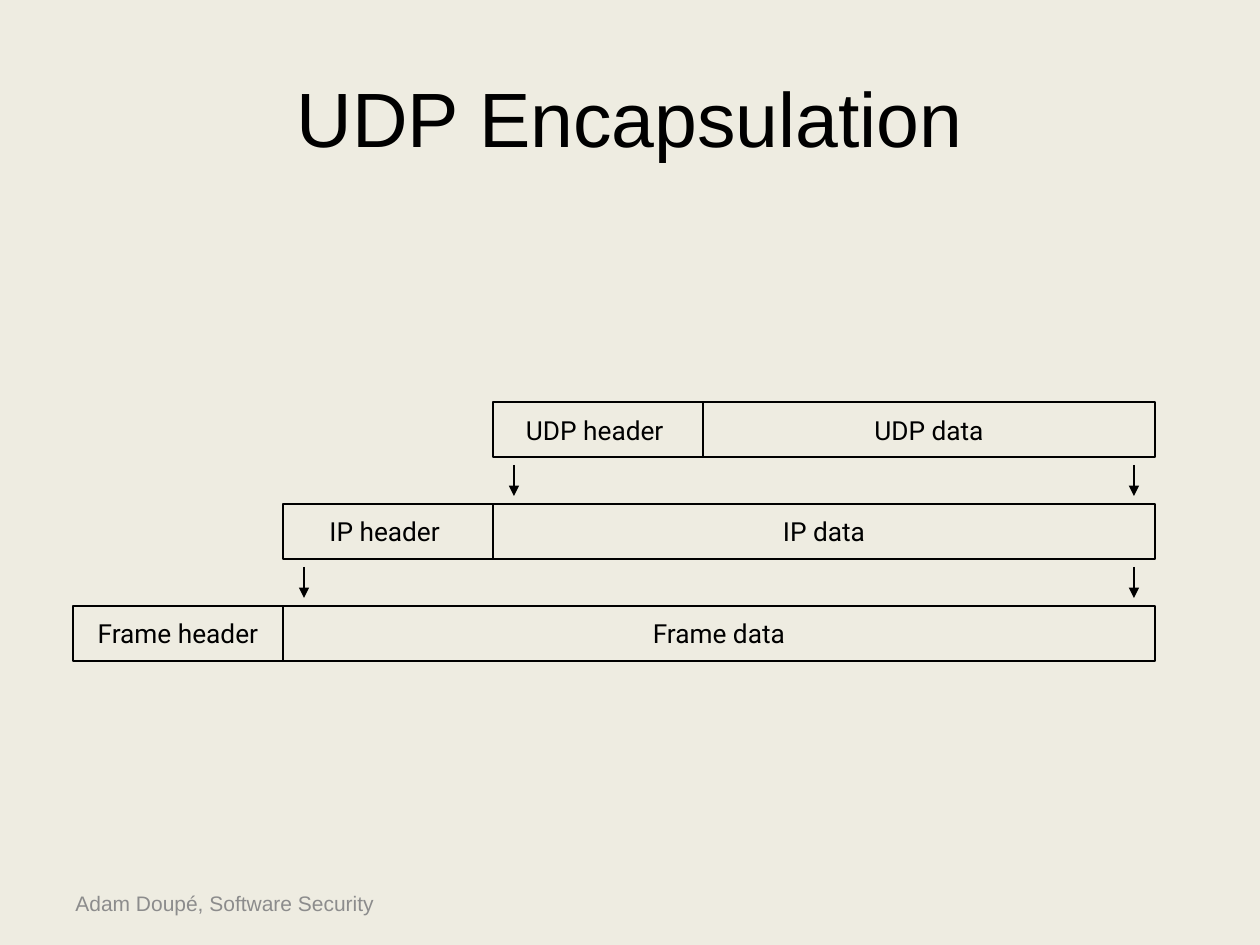
from dataclasses import dataclass

from lxml import etree
from pptx import Presentation
from pptx.dml.color import RGBColor
from pptx.enum.shapes import MSO_CONNECTOR, MSO_SHAPE
from pptx.enum.text import MSO_ANCHOR, PP_ALIGN
from pptx.oxml.ns import qn
from pptx.util import Emu, Pt

RECT = MSO_SHAPE.RECTANGLE
LINE = MSO_CONNECTOR.STRAIGHT
MIDDLE = MSO_ANCHOR.MIDDLE
LEFT, CENTER = PP_ALIGN.LEFT, PP_ALIGN.CENTER

SCALE = 914400 // 126  # EMU in one px


@dataclass(frozen=True)
class Theme:
    back: RGBColor = RGBColor(0xEE, 0xEC, 0xE1)
    ink: RGBColor = RGBColor(0, 0, 0)
    muted: RGBColor = RGBColor(0x8C, 0x8C, 0x8C)
    font: str = "Arial"
    label_font: str = "Roboto"
    title: int = 44
    label: int = 15
    foot: int = 12
    stroke: int = 1


THEME = Theme()

LAYERS = ["UDP", "IP", "Frame"]  # top to bottom
EDGE, RIGHT = 73, 1155
HEAD = 210  # width of each header
TOP, PITCH, HEIGHT = 402, 102, 55
INSET, GAP, REACH = 21, 63, 31  # arrows: from sides, from row top, length


def px(*sizes):
    return [Emu(size * SCALE) for size in sizes]


def write(shape, text, size, color, font, align):
    frame = shape.text_frame
    frame.vertical_anchor = MIDDLE
    para = frame.paragraphs[0]
    para.alignment = align
    run = para.add_run()
    run.text = text
    run.font.size = Pt(size)
    run.font.name = font
    run.font.color.rgb = color


def add_title(slide, text):
    title = slide.shapes.title
    title.left, title.top, title.width, title.height = px(63, 38, 1134, 157)
    write(title, text, THEME.title, THEME.ink, THEME.font, CENTER)


def add_foot(slide, text):
    box = slide.shapes.add_textbox(*px(63, 878, 537, 50))
    box.text_frame.word_wrap = True
    write(box, text, THEME.foot, THEME.muted, THEME.font, LEFT)


def add_field(slide, text, left, right, top):
    """Draw one outlined part of a packet."""
    box = slide.shapes.add_shape(RECT, *px(left, top, right - left, HEIGHT))
    box.shadow.inherit = False
    box.fill.background()
    box.line.color.rgb = THEME.ink
    box.line.width = Pt(THEME.stroke)
    frame = box.text_frame
    frame.word_wrap = False
    frame.margin_left, frame.margin_right = px(11, 11)
    frame.margin_top, frame.margin_bottom = px(5, 5)
    write(box, text, THEME.label, THEME.ink, THEME.label_font, CENTER)


def add_arrow(slide, x, top):
    arrow = slide.shapes.add_connector(LINE, *px(x, top, x, top + REACH))
    arrow.line.color.rgb = THEME.ink
    arrow.line.width = Pt(THEME.stroke)
    etree.SubElement(arrow.line._get_or_add_ln(), qn("a:tailEnd"), type="triangle")
    etree.SubElement(arrow._element.spPr, qn("a:effectLst"))


def add_layers(slide):
    last = len(LAYERS) - 1
    for row, name in enumerate(LAYERS):
        left = EDGE + (last - row) * HEAD
        top = TOP + row * PITCH
        tail = "" if row == last else " "
        add_field(slide, f"{name} header{tail}", left, left + HEAD, top)
        add_field(slide, f"{name} data", left + HEAD, RIGHT, top)
        if row < last:
            for x in (left + INSET, RIGHT - INSET):
                add_arrow(slide, x, top + GAP)


def main():
    deck = Presentation()
    deck.slide_width, deck.slide_height = px(1260, 945)
    slide = deck.slides.add_slide(deck.slide_layouts.get_by_name("Title Only"))
    fill = slide.background.fill
    fill.solid()
    fill.fore_color.rgb = THEME.back
    add_foot(slide, "Adam Doupé, Software Security")
    add_title(slide, "UDP Encapsulation")
    add_layers(slide)
    deck.save("out.pptx")


if __name__ == "__main__":
    main()
